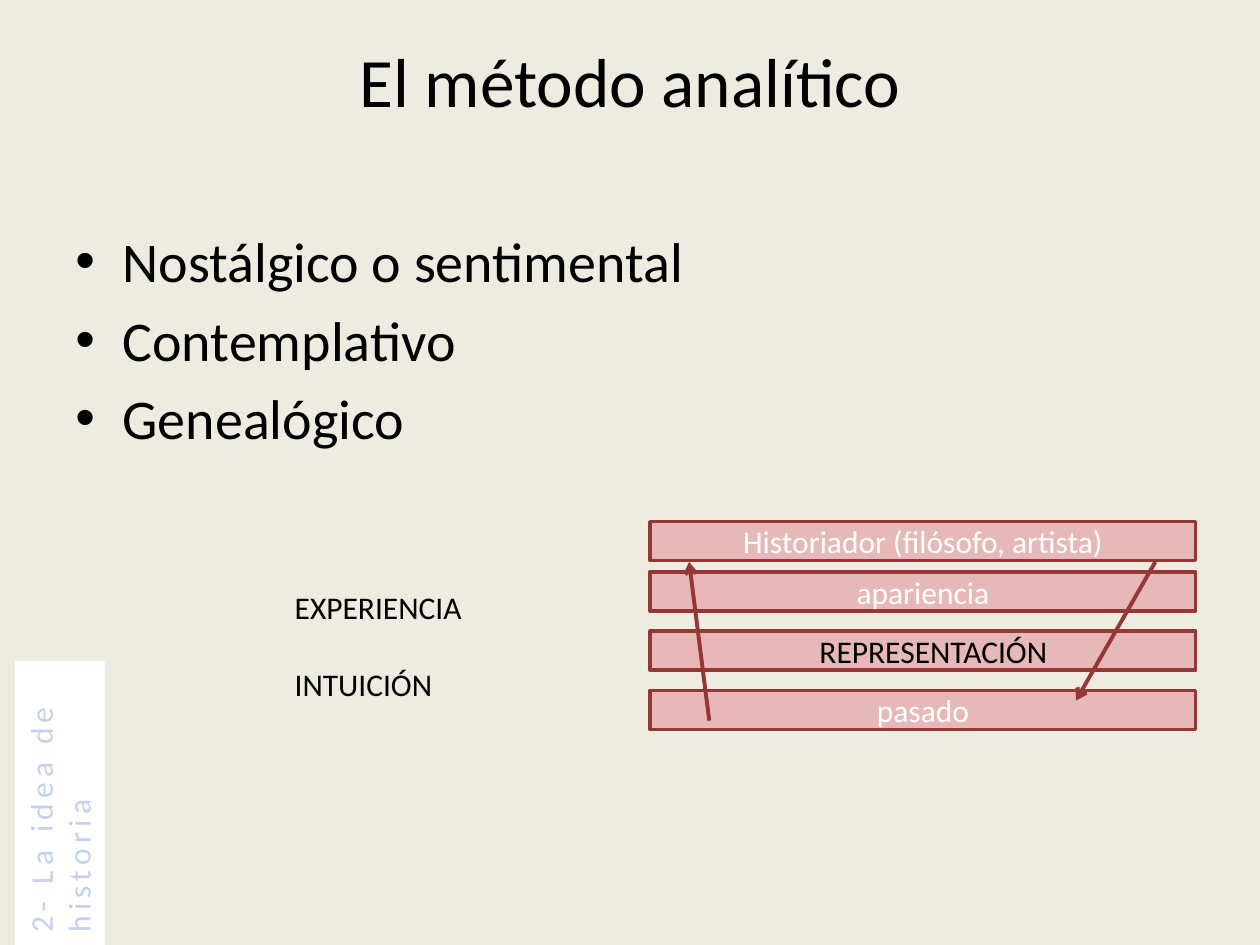
import pptx
import pptx.dml.color
import pptx.enum.shapes
import pptx.enum.text
import pptx.oxml
import pptx.oxml.ns
import pptx.util
from lxml import etree

Pt = pptx.util.Pt
RGBColor = pptx.dml.color.RGBColor
ANCHOR = pptx.enum.text.MSO_ANCHOR
ALIGN = pptx.enum.text.PP_ALIGN

CREAM = RGBColor(0xEE, 0xEC, 0xE1)
BLACK = RGBColor(0, 0, 0)
WHITE = RGBColor(0xFF, 0xFF, 0xFF)
PINK = RGBColor(0xE6, 0xB9, 0xB8)
DARK_RED = RGBColor(0x95, 0x37, 0x35)
PALE_BLUE = RGBColor(0xC2, 0xD1, 0xED)


def add_element(parent, tag, **attributes):
    """Append a DrawingML element to a parent."""
    element = etree.SubElement(parent, pptx.oxml.ns.qn(tag))
    for name, value in attributes.items():
        element.set(name, value)
    return element


def write_text(shape, lines, size=18, color=BLACK, align=ALIGN.LEFT,
               anchor=ANCHOR.TOP, gap=0, indent=0, bullet=None, spacing=0):
    """Fill a shape with formatted paragraphs."""
    frame = shape.text_frame
    frame.word_wrap = True
    frame.vertical_anchor = anchor
    for index, line in enumerate(lines):
        paragraph = frame.add_paragraph() if index else frame.paragraphs[0]
        paragraph.alignment = align
        paragraph.space_before = Pt(gap if index or bullet else 0)
        properties = paragraph._p.get_or_add_pPr()
        if indent:
            properties.set("marL", str(Pt(indent)))
        if bullet:
            properties.set("indent", str(-Pt(indent)))
            add_element(properties, "a:buFont", typeface="Arial")
            add_element(properties, "a:buChar", char=bullet)
        run = paragraph.add_run()
        run.text = line
        run.font.name = "Calibri"
        run.font.size = Pt(size)
        run.font.color.rgb = color
        if spacing:
            run.font._element.set("spc", str(spacing * 100))


def add_text_box(slide, box, lines, **text_format):
    """Add a text box with formatted paragraphs."""
    shape = slide.shapes.add_textbox(*map(Pt, box))
    write_text(shape, lines, **text_format)
    return shape


def add_rectangle(slide, box, fill, line=None):
    """Add a flat rectangle."""
    shape = slide.shapes.add_shape(
        pptx.enum.shapes.MSO_SHAPE.RECTANGLE, *map(Pt, box))
    shape.shadow.inherit = False
    shape.fill.solid()
    shape.fill.fore_color.rgb = fill
    if line is None:
        shape.line.fill.background()
    else:
        shape.line.color.rgb = line
        shape.line.width = Pt(2)
    return shape


def add_arrow(slide, start, end):
    """Add a straight arrow between two points."""
    connector = slide.shapes.add_connector(
        pptx.enum.shapes.MSO_CONNECTOR.STRAIGHT, *map(Pt, start + end))
    connector.line.color.rgb = DARK_RED
    connector.line.width = Pt(2.25)
    add_element(connector.line._get_or_add_ln(), "a:tailEnd", type="arrow")
    add_element(connector._element.spPr, "a:effectLst")


def add_title(slide, box):
    """Place the title in the upper part of its box."""
    shape = add_text_box(slide, box, ["El método analítico"],
                         size=39.6, align=ALIGN.CENTER)
    shape.text_frame.margin_top = 0


def add_layers(slide, box):
    """Stack the labelled bars and link past and historian with arrows."""
    left, top, width, height = box
    bar_height = 22.3
    bars = [
        (0, "Historiador (filósofo, artista)", WHITE, 0),
        (28.8, "apariencia", WHITE, 0),
        (62.6, "REPRESENTACIÓN", BLACK, 12),
        (height - bar_height, "pasado", WHITE, 0),
    ]
    for offset, label, color, indent in bars:
        bar = add_rectangle(slide, (left, top + offset, width, bar_height),
                            PINK, DARK_RED)
        write_text(bar, [label], color=color, indent=indent,
                   align=ALIGN.CENTER, anchor=ANCHOR.MIDDLE)
    upper = top + bar_height + 0.7
    add_arrow(slide, (left + 33.8, top + 113.7), (left + 22.3, upper))
    add_arrow(slide, (left + 288.7, upper), (left + 243.4, top + 102.2))


def add_section_label(slide, box):
    """Place the section name, turned to read upwards."""
    label = add_rectangle(slide, box, WHITE)
    label.rotation = 270
    write_text(label, ["2- La idea de historia"], color=PALE_BLUE, spacing=3)


def main():
    """Build and save the presentation."""
    presentation = pptx.Presentation()
    presentation.slide_width = Pt(720)
    presentation.slide_height = Pt(540)
    slide = presentation.slides.add_slide(presentation.slide_layouts[6])
    slide.background.fill.solid()
    slide.background.fill.fore_color.rgb = CREAM

    add_title(slide, (36, 21.6, 648, 90))
    add_text_box(slide, (36, 126, 391.7, 353.5),
                 ["Nostálgico o sentimental", "Contemplativo", "Genealógico"],
                 size=32, gap=6.4, indent=27, bullet="•")
    add_layers(slide, (371.5, 298.1, 311.8, 118.8))
    add_text_box(slide, (161.3, 332.6, 181.4, 72.7),
                 ["EXPERIENCIA", "INTUICIÓN"], gap=22)
    add_section_label(slide, (-46.8, 433.4, 162, 51.1))
    presentation.save("out.pptx")


if __name__ == "__main__":
    main()
